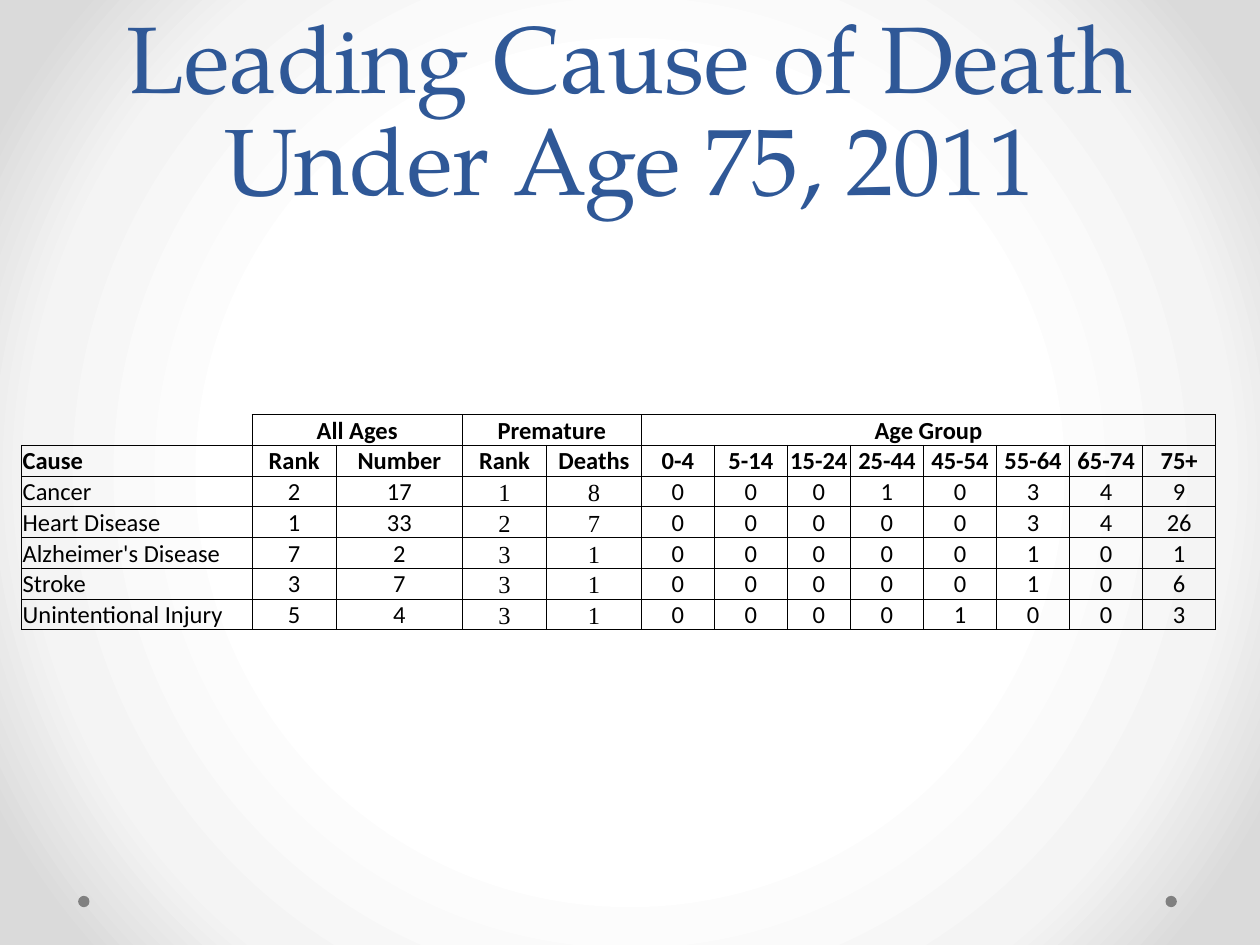
"""Build the slide on leading causes of death under age 75."""
from pptx import Presentation, util as u
from pptx.dml.color import RGBColor
from pptx.enum import shapes, text
from pptx.oxml import parse_xml
from pptx.oxml.ns import nsdecls

BLACK = "000000"
BACKGROUND_STOPS = [(50, "FFFFFF"), (76, "F4F4F4"), (92, "DADADA")]
COLUMN_WIDTHS = [1.83, 0.67, 1, 0.67, 0.75, 0.58, 0.58, 0.5] + [0.58] * 5
GROUPS = [(1, 2, "All Ages"), (3, 4, "Premature"), (5, 12, "Age Group")]
HEADINGS = ["Cause", "Rank", "Number", "Rank", "Deaths", "0-4", "5-14", "15-24",
            "25-44", "45-54", "55-64", "65-74", "75+"]
CAUSES = [
    ["Cancer", 2, 17, 1, 8, 0, 0, 0, 1, 0, 3, 4, 9],
    ["Heart Disease", 1, 33, 2, 7, 0, 0, 0, 0, 0, 3, 4, 26],
    ["Alzheimer's Disease", 7, 2, 3, 1, 0, 0, 0, 0, 0, 1, 0, 1],
    ["Stroke", 3, 7, 3, 1, 0, 0, 0, 0, 0, 1, 0, 6],
    ["Unintentional Injury", 5, 4, 3, 1, 0, 0, 0, 0, 1, 0, 0, 3],
]
PREMATURE_COLUMNS = (3, 4)
CELL_FORMAT = {
    "margin_left": u.Inches(0.01), "margin_right": u.Inches(0.01),
    "margin_top": u.Inches(0.01), "margin_bottom": 0,
    "vertical_anchor": text.MSO_ANCHOR.BOTTOM,
}


def color(value):
    """Return the colour for a hex string."""
    return RGBColor.from_string(value)


def apply_format(target, values):
    """Set each named attribute on the target."""
    for name, value in values.items():
        setattr(target, name, value)


def write_text(paragraph, content, alignment, fill, **font):
    """Write one formatted run into a paragraph."""
    paragraph.alignment = alignment
    run = paragraph.add_run()
    run.text = str(content)
    apply_format(run.font, font)
    run.font.color.rgb = color(fill)


def set_background(slide):
    """Give the slide a circular gradient centred on the page."""
    stops = "".join(
        f'<a:gs pos="{position * 1000}"><a:srgbClr val="{value}"/></a:gs>'
        for position, value in BACKGROUND_STOPS)
    slide.element.cSld.insert(0, parse_xml(
        f'<p:bg {nsdecls("p", "a")}><p:bgPr><a:gradFill rotWithShape="1">'
        f'<a:gsLst>{stops}</a:gsLst><a:path path="circle">'
        '<a:fillToRect l="50000" t="50000" r="50000" b="50000"/></a:path>'
        '</a:gradFill><a:effectLst/></p:bgPr></p:bg>'))


def add_dot(slide, left):
    """Add a small grey dot near the bottom edge."""
    dot = slide.shapes.add_shape(
        shapes.MSO_SHAPE.OVAL, u.Inches(left), u.Inches(7.11),
        u.Inches(0.09), u.Inches(0.09))
    dot.shadow.inherit = False
    dot.fill.solid()
    dot.fill.fore_color.rgb = color("808080")
    dot.line.fill.background()


def add_title(slide, content):
    """Add the centred slide title."""
    box = slide.shapes.add_textbox(
        u.Inches(0.5), 0, u.Inches(9), u.Inches(1.75))
    apply_format(box.text_frame, {
        "word_wrap": True, "vertical_anchor": text.MSO_ANCHOR.BOTTOM})
    paragraph = box.text_frame.paragraphs[0]
    paragraph.line_spacing = u.Pt(58)
    write_text(paragraph, content, text.PP_ALIGN.CENTER, "2F5897",
               name="TeX Gyre Pagella", size=u.Pt(54))


def set_borders(cell, visible):
    """Draw the visible sides of a cell and hide the others."""
    properties = cell._tc.get_or_add_tcPr()
    for index, side in enumerate("LRTB"):
        fill = (f'<a:solidFill><a:srgbClr val="{BLACK}"/></a:solidFill>'
                if side in visible else "<a:noFill/>")
        properties.insert(index, parse_xml(
            f'<a:ln{side} {nsdecls("a")} w="{u.Pt(0.5)}">{fill}</a:ln{side}>'))


def format_cell(cell, row, column):
    """Set the insets, fill, borders and empty-text size of a cell."""
    apply_format(cell, CELL_FORMAT)
    cell.fill.background()
    set_borders(cell, "RB" if row == column == 0 else "LRTB")
    cell.text_frame.paragraphs[0]._p.append(
        parse_xml(f'<a:endParaRPr {nsdecls("a")} sz="1400"/>'))


def write_cell(cell, content, row, column):
    """Write a heading or value in its column's style."""
    premature = row > 1 and column in PREMATURE_COLUMNS
    write_text(cell.text_frame.paragraphs[0], content,
               text.PP_ALIGN.CENTER if column else text.PP_ALIGN.LEFT, BLACK,
               name="Times New Roman" if premature else "Calibri",
               size=u.Pt(14), bold=row < 2)


def add_cause_table(slide):
    """Add the table of causes by rank and age group."""
    rows = [HEADINGS] + CAUSES
    table = slide.shapes.add_table(
        len(rows) + 1, len(HEADINGS), u.Inches(0.17), u.Inches(3.29),
        u.Inches(9.5), u.Inches(1.71)).table
    apply_format(table, {"first_row": False, "horz_banding": False})
    for column, width in zip(table.columns, COLUMN_WIDTHS):
        column.width = u.Inches(width)
    for row in range(len(rows) + 1):
        for column in range(len(HEADINGS)):
            format_cell(table.cell(row, column), row, column)
    for first, last, label in GROUPS:
        table.cell(0, first).merge(table.cell(0, last))
        write_cell(table.cell(0, first), label, 0, first)
    for row, values in enumerate(rows, start=1):
        for column, value in enumerate(values):
            write_cell(table.cell(row, column), value, row, column)


def main():
    """Build and save the presentation."""
    presentation = Presentation()
    apply_format(presentation, {
        "slide_width": u.Inches(10), "slide_height": u.Inches(7.5)})
    slide = presentation.slides.add_slide(presentation.slide_layouts[6])
    set_background(slide)
    for left in (9.25, 0.62):
        add_dot(slide, left)
    add_title(slide, "Leading Cause of Death Under Age 75, 2011")
    add_cause_table(slide)
    presentation.save("out.pptx")


if __name__ == "__main__":
    main()
